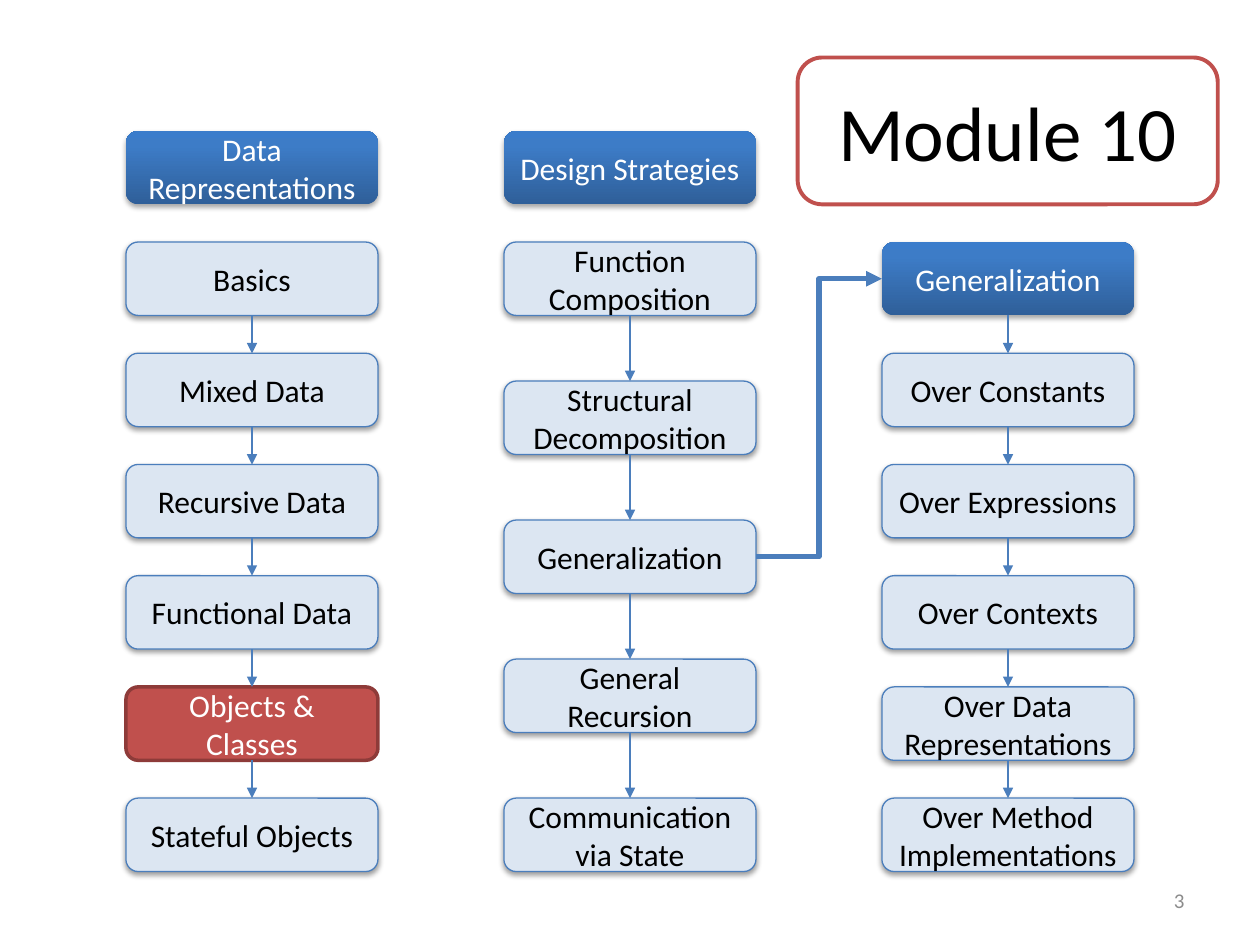
import copy
import dataclasses

import pptx
import pptx.dml.color
import pptx.enum.shapes
import pptx.enum.text
import pptx.oxml
import pptx.oxml.ns
import pptx.util

Cm = pptx.util.Cm
Pt = pptx.util.Pt
Rgb = pptx.dml.color.RGBColor.from_string
Shape = pptx.enum.shapes.MSO_SHAPE
Connector = pptx.enum.shapes.MSO_CONNECTOR
Align = pptx.enum.text.PP_ALIGN
Anchor = pptx.enum.text.MSO_ANCHOR


@dataclasses.dataclass(frozen=True)
class Theme:
    font: str = "Calibri"
    dark: str = "000000"
    light: str = "FFFFFF"
    muted: str = "8C8C8C"
    accent: str = "4B7EBC"
    pale: str = "DCE6F2"
    red: str = "C0504D"
    dark_red: str = "8E3B39"
    gradient: tuple = ((0, "2F5F99"), (0.8, "3D7CC7"), (1, "3A7CCB"))
    title_size: int = 44
    body_size: int = 18
    small_size: int = 12


THEME = Theme()
STYLES = {
    "header": {"fill": THEME.gradient, "line": None, "color": THEME.light,
               "size": THEME.body_size, "shadow": (1.8, 35)},
    "topic": {"fill": THEME.pale, "line": (THEME.accent, 0.75), "color": THEME.dark,
              "size": THEME.body_size, "shadow": (1.6, 38)},
    "current": {"fill": THEME.red, "line": (THEME.dark_red, 2), "color": THEME.light,
                "size": THEME.body_size, "shadow": None},
    "title": {"fill": None, "line": (THEME.red, 2.25), "color": THEME.dark,
              "size": THEME.title_size, "shadow": None},
}

BOX_WIDTH, BOX_HEIGHT = 5.08, 1.48
HEADER_TOP, FIRST_TOP, LAST_TOP = 2.64, 4.88, 16.09
DATA_LEFT, DESIGN_LEFT, GENERAL_LEFT = 2.54, 10.16, 17.78

DATA_TOPICS = [
    ("Basics", "topic"), ("Mixed Data", "topic"), ("Recursive Data", "topic"),
    ("Functional Data", "topic"), ("Objects & Classes", "current"),
    ("Stateful Objects", "topic"),
]
DESIGN_TOPICS = [
    ("Function Composition", "topic"), ("Structural Decomposition", "topic"),
    ("Generalization", "topic"), ("General Recursion", "topic"),
    ("Communication via State", "topic"),
]
GENERAL_TOPICS = [
    ("Generalization", "header"), ("Over Constants", "topic"),
    ("Over Expressions", "topic"), ("Over Contexts", "topic"),
    ("Over Data Representations", "topic"), ("Over Method Implementations", "topic"),
]


class ModuleMap:
    def __init__(self, slide, theme):
        self.slide = slide
        self.theme = theme

    def label(self, shape, text, size, color, align):
        frame = shape.text_frame
        for name, value in {"word_wrap": True, "vertical_anchor": Anchor.MIDDLE}.items():
            setattr(frame, name, value)
        para = frame.paragraphs[0]
        para.alignment = align
        span = para.add_run()
        span.text = text
        for name, value in {"name": self.theme.font, "size": Pt(size)}.items():
            setattr(span.font, name, value)
        span.font.color.rgb = Rgb(color)

    def paint(self, shape, fill):
        if fill is None:
            shape.fill.background()
        elif isinstance(fill, str):
            shape.fill.solid()
            shape.fill.fore_color.rgb = Rgb(fill)
        else:
            shape.fill.gradient()
            shape.fill.gradient_angle = 90
            stop_list = shape._element.spPr.find(".//" + pptx.oxml.ns.qn("a:gsLst"))
            stop_list.append(copy.deepcopy(stop_list[-1]))
            for stop, (position, color) in zip(shape.fill.gradient_stops, fill):
                stop.position = position
                stop.color.rgb = Rgb(color)

    def shade(self, shape, distance, opacity):
        effects = shape._element.spPr.find(pptx.oxml.ns.qn("a:effectLst"))
        effects.append(pptx.oxml.parse_xml(
            f'<a:outerShdw {pptx.oxml.ns.nsdecls("a")} blurRad="{Pt(3.1)}" '
            f'dist="{Pt(distance)}" dir="5400000" rotWithShape="0">'
            f'<a:srgbClr val="{self.theme.dark}"><a:alpha val="{opacity * 1000}"/>'
            '</a:srgbClr></a:outerShdw>'))

    def box(self, text, style, left, top, width=BOX_WIDTH, height=BOX_HEIGHT):
        look = STYLES[style]
        box = self.slide.shapes.add_shape(
            Shape.ROUNDED_RECTANGLE, Cm(left), Cm(top), Cm(width), Cm(height))
        box.shadow.inherit = False
        self.paint(box, look["fill"])
        if look["line"]:
            color, weight = look["line"]
            box.line.color.rgb = Rgb(color)
            box.line.width = Pt(weight)
        else:
            box.line.fill.background()
        if look["shadow"]:
            self.shade(box, *look["shadow"])
        self.label(box, text, look["size"], look["color"], Align.CENTER)
        return box

    def arrow(self, source, target, kind=Connector.STRAIGHT, sides=(2, 0), weight=0.75):
        arrow = self.slide.shapes.add_connector(
            kind, source.left + source.width, source.top, target.left, target.top)
        arrow.begin_connect(source, sides[0])
        arrow.end_connect(target, sides[1])
        arrow.line.color.rgb = Rgb(self.theme.accent)
        arrow.line.width = Pt(weight)
        namespace = pptx.oxml.ns.nsdecls("a")
        properties = arrow._element.spPr
        properties.find(pptx.oxml.ns.qn("a:ln")).append(
            pptx.oxml.parse_xml(f'<a:tailEnd {namespace} type="triangle"/>'))
        properties.append(pptx.oxml.parse_xml(f"<a:effectLst {namespace}/>"))

    def column(self, left, topics):
        step = (LAST_TOP - FIRST_TOP) / (len(topics) - 1)
        boxes = [self.box(text, style, left, FIRST_TOP + row * step)
                 for row, (text, style) in enumerate(topics)]
        for source, target in zip(boxes, boxes[1:]):
            self.arrow(source, target)
        return boxes

    def page_number(self, text):
        box = self.slide.shapes.add_textbox(Cm(18.2), Cm(17.65), Cm(5.93), Cm(1.01))
        self.label(box, text, self.theme.small_size, self.theme.muted, Align.RIGHT)


def main():
    deck = pptx.Presentation()
    for name, value in {"slide_width": Cm(25.4), "slide_height": Cm(19.05)}.items():
        setattr(deck, name, value)
    page = ModuleMap(deck.slides.add_slide(deck.slide_layouts[6]), THEME)

    general = page.column(GENERAL_LEFT, GENERAL_TOPICS)
    page.box("Data Representations", "header", DATA_LEFT, HEADER_TOP)
    page.column(DATA_LEFT, DATA_TOPICS)
    page.box("Design Strategies", "header", DESIGN_LEFT, HEADER_TOP)
    design = page.column(DESIGN_LEFT, DESIGN_TOPICS)
    page.box("Module 10", "title", 16.08, 1.16, 8.47, 2.96)
    page.arrow(design[2], general[0], Connector.ELBOW, (3, 1), 3)
    page.page_number("3")

    deck.save("out.pptx")


if __name__ == "__main__":
    main()
